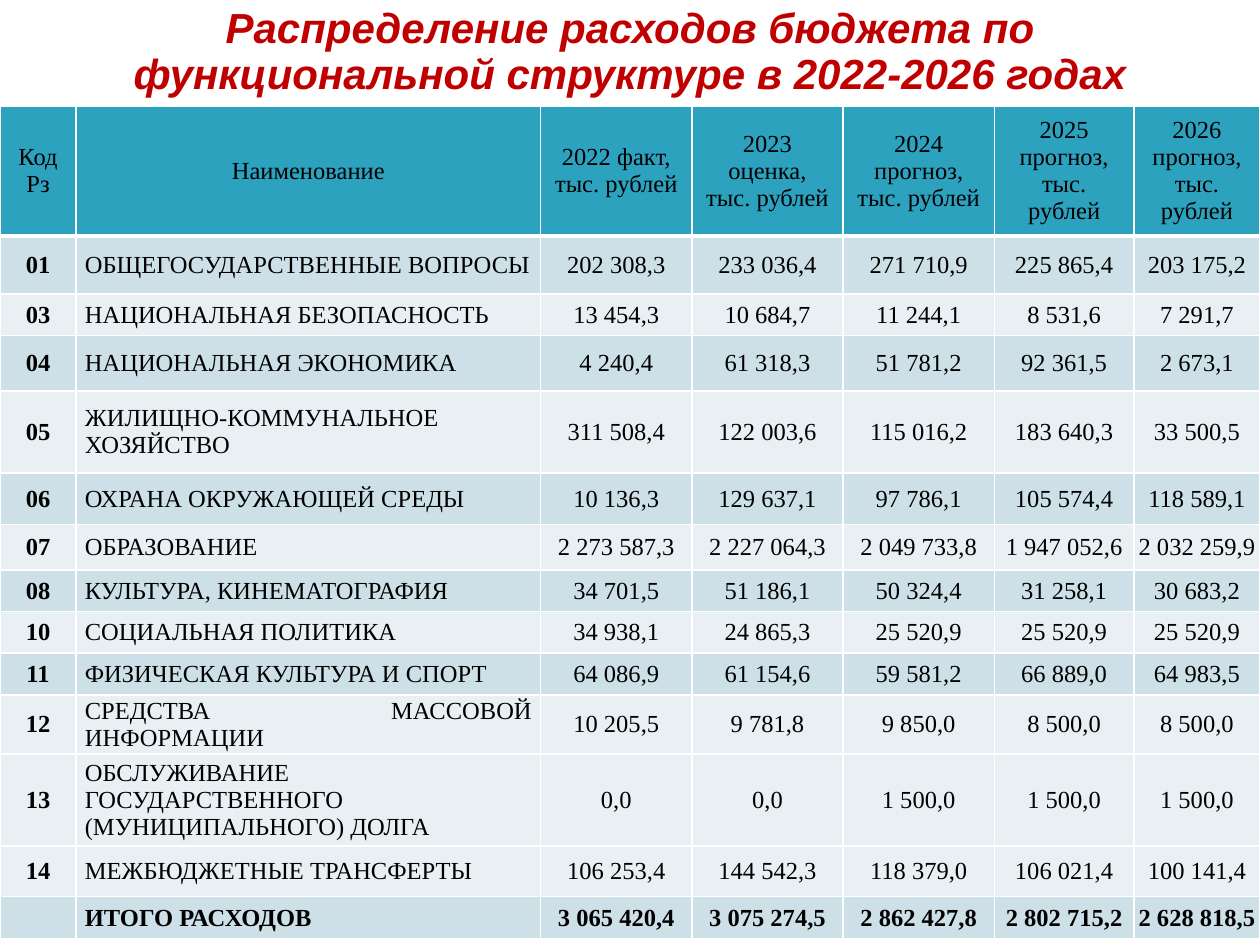
from lxml.etree import SubElement
from pptx import Presentation
from pptx.dml.color import RGBColor
from pptx.enum.text import MSO_ANCHOR as Anchor, PP_ALIGN as Align
from pptx.oxml.ns import qn
from pptx.util import Pt

RED = RGBColor(0xC0, 0x00, 0x00)
BLACK = RGBColor(0x00, 0x00, 0x00)
WHITE = RGBColor(0xFF, 0xFF, 0xFF)
TEAL = RGBColor(0x2D, 0xA2, 0xBF)
DARK = RGBColor(0xCD, 0xE0, 0xE8)
LIGHT = RGBColor(0xE8, 0xF0, 0xF4)

TITLE = "Распределение расходов бюджета по функциональной структуре в 2022-2026 годах"
HEAD = ["Код\nРз", "Наименование"] + [
    f"{year}, тыс. рублей" for year in
    ("2022 факт", "2023 оценка", "2024 прогноз", "2025 прогноз", "2026 прогноз")]
BODY = [line.split("|") for line in (
    "01|ОБЩЕГОСУДАРСТВЕННЫЕ ВОПРОСЫ|202 308,3|233 036,4|271 710,9|225 865,4|203 175,2",
    "03|НАЦИОНАЛЬНАЯ БЕЗОПАСНОСТЬ|13 454,3|10 684,7|11 244,1|8 531,6|7 291,7",
    "04|НАЦИОНАЛЬНАЯ ЭКОНОМИКА|4 240,4|61 318,3|51 781,2|92 361,5|2 673,1",
    "05|ЖИЛИЩНО-КОММУНАЛЬНОЕ ХОЗЯЙСТВО|311 508,4|122 003,6|115 016,2|183 640,3|33 500,5",
    "06|ОХРАНА ОКРУЖАЮЩЕЙ СРЕДЫ|10 136,3|129 637,1|97 786,1|105 574,4|118 589,1",
    "07|ОБРАЗОВАНИЕ|2 273 587,3|2 227 064,3|2 049 733,8|1 947 052,6|2 032 259,9",
    "08|КУЛЬТУРА, КИНЕМАТОГРАФИЯ|34 701,5|51 186,1|50 324,4|31 258,1|30 683,2",
    "10|СОЦИАЛЬНАЯ ПОЛИТИКА|34 938,1|24 865,3|25 520,9|25 520,9|25 520,9",
    "11|ФИЗИЧЕСКАЯ КУЛЬТУРА И СПОРТ|64 086,9|61 154,6|59 581,2|66 889,0|64 983,5",
    "12|СРЕДСТВА МАССОВОЙ ИНФОРМАЦИИ|10 205,5|9 781,8|9 850,0|8 500,0|8 500,0",
    "13|ОБСЛУЖИВАНИЕ ГОСУДАРСТВЕННОГО (МУНИЦИПАЛЬНОГО) ДОЛГА|0,0|0,0|1 500,0|1 500,0|1 500,0",
    "14|МЕЖБЮДЖЕТНЫЕ ТРАНСФЕРТЫ|106 253,4|144 542,3|118 379,0|106 021,4|100 141,4",
    "|ИТОГО РАСХОДОВ|3 065 420,4|3 075 274,5|2 862 427,8|2 802 715,2|2 628 818,5",
)]
TOTAL = len(BODY)
WIDTHS = [43.5, 265.5, 86.4, 86.4, 86.4, 79.8, 72]
HEIGHTS = [67.7, 33.1, 23.8, 31.7, 46.8, 29.5, 25.9,
           23.8, 23.8, 23.8, 33.8, 52.6, 28.8, 24.5]
DARK_ROWS = {1, 3, 5, 7, 9, TOTAL}


def add_run(para, text, font, size, color, bold=False, italic=False):
    run = para.add_run()
    run.text = text
    run.font.name, run.font.size = font, Pt(size)
    run.font.bold, run.font.italic = bold, italic
    run.font.color.rgb = color


def set_lines(cell, row):
    """White rules on all sides, thicker between head and body."""
    props = cell._tc.get_or_add_tcPr()
    for side in "LRTB":
        thick = (row, side) in ((0, "B"), (1, "T"))
        line = SubElement(props, qn(f"a:ln{side}"), w=str(Pt(3 if thick else 1)))
        fill = SubElement(line, qn("a:solidFill"))
        SubElement(fill, qn("a:srgbClr"), val=str(WHITE))


def set_pads(cell, side, top):
    cell.margin_left = cell.margin_right = Pt(side)
    cell.margin_top = cell.margin_bottom = Pt(top)


def fill_cell(cell, row, col, text):
    set_lines(cell, row)
    cell.fill.solid()
    cell.fill.fore_color.rgb = (
        TEAL if row == 0 else DARK if row in DARK_ROWS else LIGHT)
    cell.vertical_anchor = Anchor.MIDDLE
    if row == 0:
        set_pads(cell, 7.2, 3.6)
    else:
        set_pads(cell, 5 if col < 4 else 0, 0)

    frame = cell.text_frame
    bold = row == TOTAL or (row > 0 and col == 0)
    for num, part in enumerate(text.split("\n")):
        para = frame.add_paragraph() if num else frame.paragraphs[0]
        para.alignment = Align.JUSTIFY if row and col == 1 else Align.CENTER
        if part:
            add_run(para, part, "Times New Roman", 14, BLACK, bold)


def add_title(slide, left, top, width, height):
    box = slide.shapes.add_textbox(Pt(left), Pt(top), Pt(width), Pt(height))
    frame = box.text_frame
    frame.word_wrap = True
    frame.vertical_anchor = Anchor.MIDDLE
    para = frame.paragraphs[0]
    para.alignment = Align.CENTER
    para.line_spacing = 0.9
    add_run(para, TITLE, "Arial", 24, RED, bold=True, italic=True)


def add_budget(slide, left, top, width, height):
    rows = [HEAD] + BODY
    table = slide.shapes.add_table(
        len(rows), len(HEAD), Pt(left), Pt(top), Pt(width), Pt(height)).table
    table.first_row = table.horz_banding = False
    for col, size in zip(table.columns, WIDTHS):
        col.width = Pt(size)
    for row, size in zip(table.rows, HEIGHTS):
        row.height = Pt(size)
    for row, texts in enumerate(rows):
        for col, text in enumerate(texts):
            fill_cell(table.cell(row, col), row, col, text)


def main():
    deck = Presentation()
    deck.slide_width, deck.slide_height = Pt(720), Pt(540)
    slide = deck.slides.add_slide(deck.slide_layouts[6])
    # Heading
    add_title(slide, 49.7, 0, 620.6, 60.5)
    # Spending by section and year
    add_budget(slide, 0, 60.5, sum(WIDTHS), sum(HEIGHTS))
    deck.save("out.pptx")


if __name__ == "__main__":
    main()
